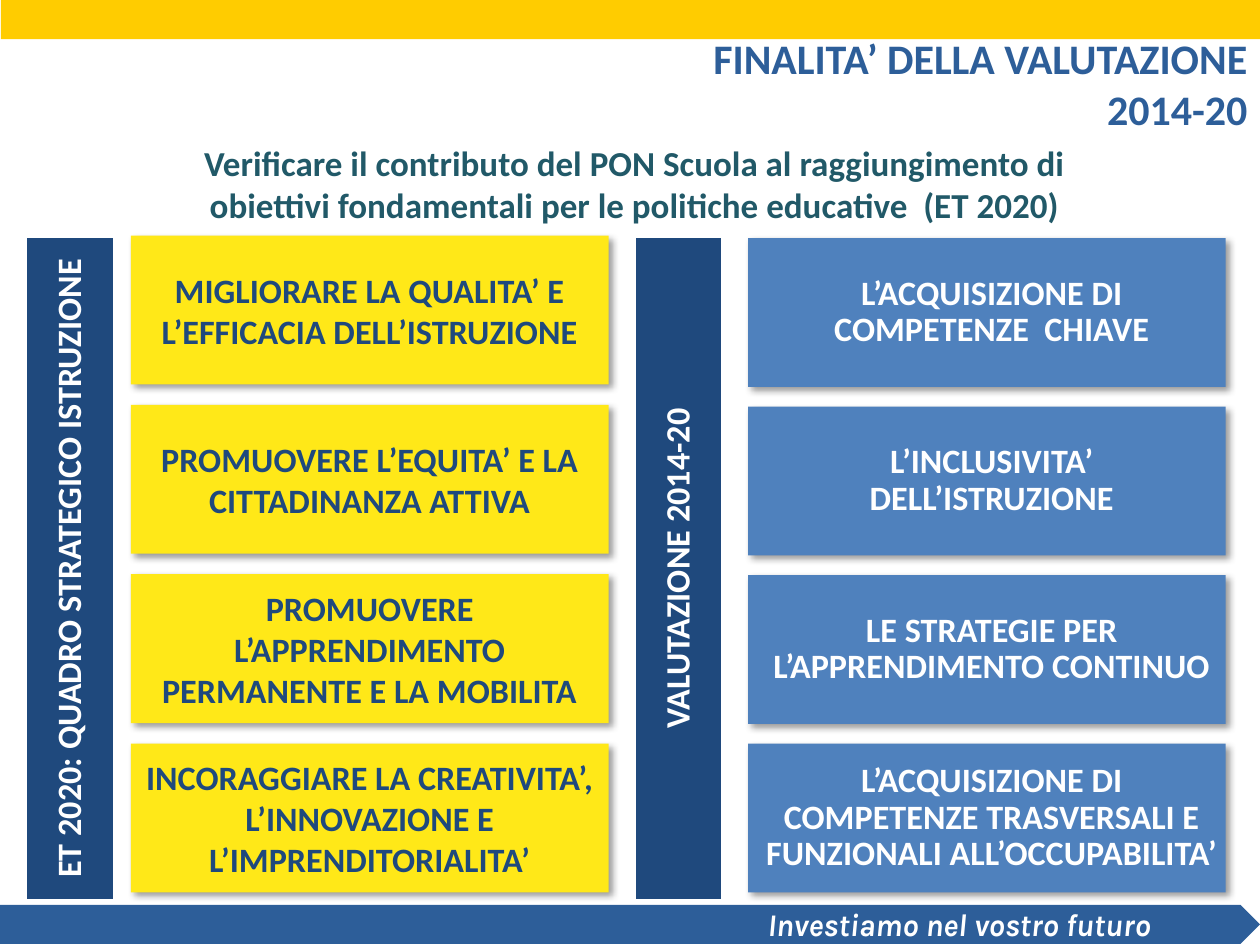
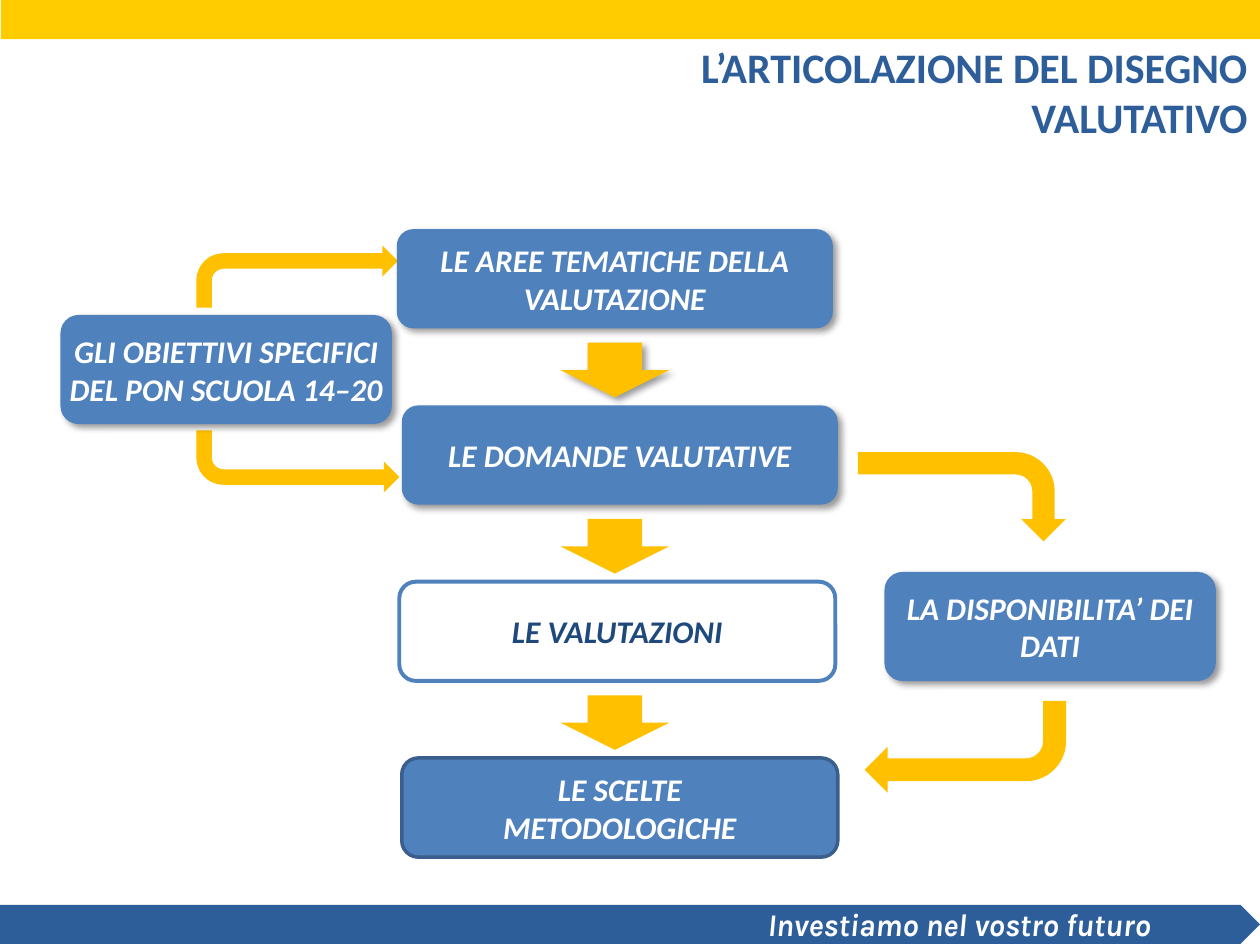
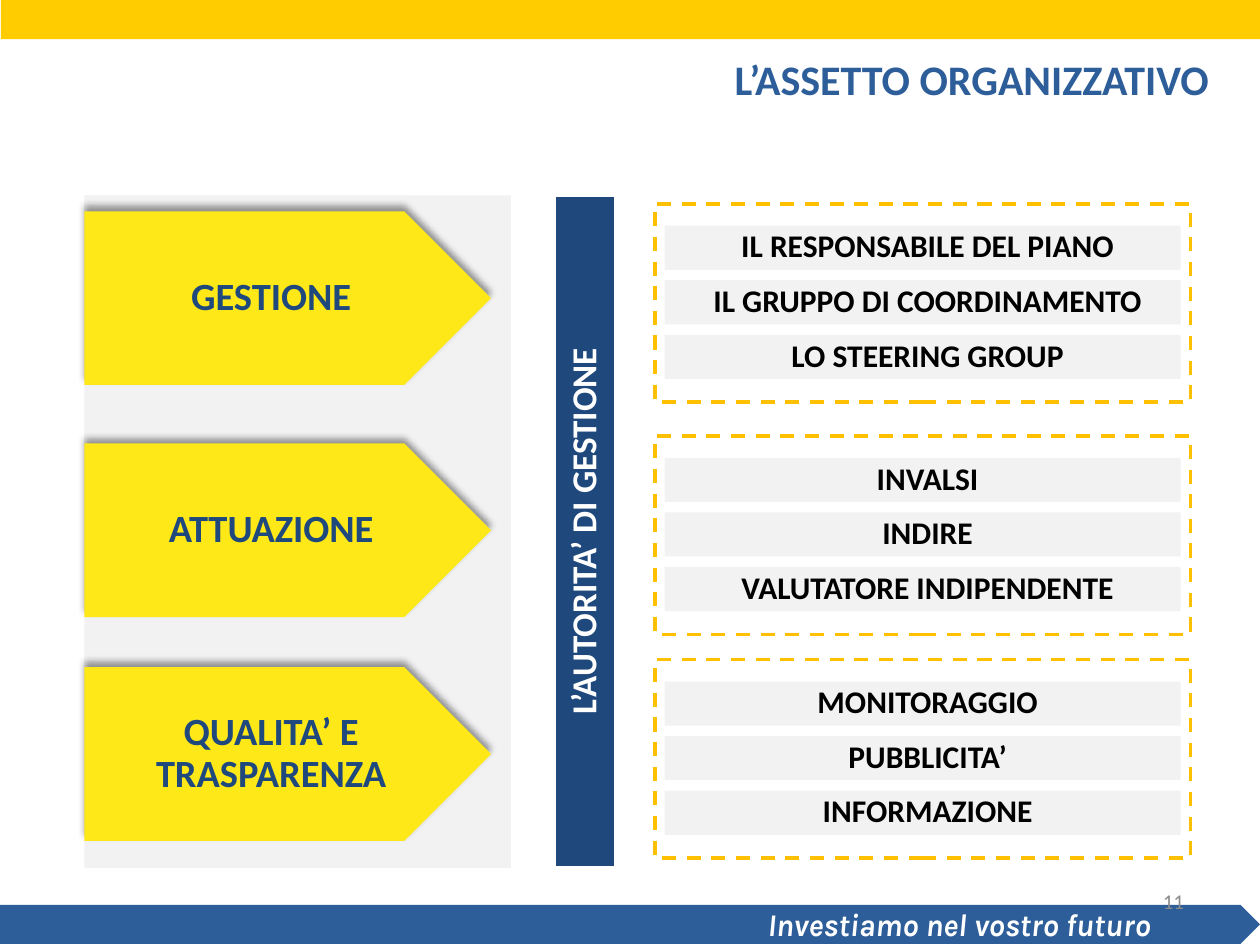
import lxml.etree
import pptx
import pptx.dml.color
import pptx.enum.dml
import pptx.enum.shapes
import pptx.enum.text
import pptx.oxml.ns
import pptx.util

Cm = pptx.util.Cm
Pt = pptx.util.Pt
SHAPE = pptx.enum.shapes.MSO_SHAPE
ALIGN = pptx.enum.text.PP_ALIGN
MIDDLE = pptx.enum.text.MSO_ANCHOR.MIDDLE
qn = pptx.oxml.ns.qn

COLORS = {
    "band": "FFCC00", "footer": "2D5E99", "title": "2D5E99", "navy": "1F497D",
    "yellow": "FFE818", "blue": "4F81BD", "arrow": "FFC000", "edge": "3A5F8C",
    "teal": "215968", "panel": "F2F2F2", "white": "FFFFFF", "black": "000000",
    "number": "8C8C8C",
}
WIDTH, HEIGHT = 25.4, 19.05
TITLE_ONLY = 5


def rgb(name):
    return pptx.dml.color.RGBColor.from_string(COLORS[name])


def add_shadow(sp, angle):
    effects = sp._element.spPr.find(qn("a:effectLst"))
    shadow = lxml.etree.SubElement(
        effects, qn("a:outerShdw"), blurRad=str(Pt(4)), dist=str(Pt(3)),
        dir=str(angle * 60000), rotWithShape="0")
    color = lxml.etree.SubElement(shadow, qn("a:srgbClr"), val=COLORS["black"])
    lxml.etree.SubElement(color, qn("a:alpha"), val="40000")


def add_box(s, kind, box, fill=None, line=None, weight=2, shadow=None):
    """Draw a preset shape in box (left, top, width, height in cm); shadow is an angle."""
    sp = s.shapes.add_shape(kind, *map(Cm, box))
    sp.shadow.inherit = False
    if fill:
        sp.fill.solid()
        sp.fill.fore_color.rgb = rgb(fill)
    else:
        sp.fill.background()
    if line:
        sp.line.color.rgb = rgb(line)
        sp.line.width = Pt(weight)
    else:
        sp.line.fill.background()
    if shadow is not None:
        add_shadow(sp, shadow)
    return sp


def write(sp, lines, size, color, align=ALIGN.CENTER, bold=True, italic=False,
          font="Calibri", spacing=None, insets=None):
    """Fill a shape with paragraphs; insets are left, top, right, bottom in cm."""
    tf = sp.text_frame
    tf.word_wrap = True
    tf.auto_size = pptx.enum.text.MSO_AUTO_SIZE.NONE
    tf.vertical_anchor = MIDDLE
    if insets:
        tf.margin_left, tf.margin_top, tf.margin_right, tf.margin_bottom = map(Cm, insets)
    tf.text = lines
    for p in tf.paragraphs:
        p.alignment = align
        if spacing:
            p.line_spacing = spacing
        p.font.name, p.font.size = font, Pt(size)
        p.font.bold, p.font.italic = bold, italic
        p.font.color.rgb = rgb(color)


def add_slide(prs, title, title_box):
    s = prs.slides.add_slide(prs.slide_layouts[TITLE_ONLY])
    add_box(s, SHAPE.RECTANGLE, (0.02, 0, WIDTH - 0.02, 0.79), "band")
    footer = add_box(s, SHAPE.PENTAGON, (0, 18.24, WIDTH, 0.79), "footer")
    write(footer, "Investiamo nel vostro futuro", 18, "white", ALIGN.RIGHT,
          italic=True, font="Karla", insets=(0.25, 0, 2, 0))
    sp = s.shapes.title
    sp.left, sp.top, sp.width, sp.height = map(Cm, title_box)
    write(sp, title, 24, "title", ALIGN.RIGHT, insets=(0.25, 0.13, 0.25, 0.13))
    return s


def add_vertical_label(s, box, text, size):
    sp = add_box(s, SHAPE.RECTANGLE, box, "navy", "white")
    write(sp, text, size, "white", spacing=0.9, insets=(0.15,) * 4)
    sp.text_frame._txBody.bodyPr.set("vert", "vert270")


def add_card_column(s, box, texts, fill, color, spacing, left_inset):
    """Stack equal cards so that they fill the height of box."""
    x, y, w, h = box
    card_h = 3
    pitch = (h - card_h) / (len(texts) - 1)
    for i, text in enumerate(texts):
        sp = add_box(s, SHAPE.RECTANGLE, (x, y + i * pitch, w, card_h), fill, shadow=45)
        write(sp, text, 19.5, color, spacing=spacing,
              insets=(left_inset, 0.15, 0.15, 0.15))


def build_goals(prs):
    s = add_slide(prs, "FINALITA’ DELLA VALUTAZIONE 2014-20", (12.27, 0.74, 13.13, 1.88))
    subtitle = s.shapes.add_textbox(Cm(0.89), Cm(2.72), Cm(23.8), Cm(1.96))
    write(subtitle, "Verificare il contributo del PON Scuola al raggiungimento di\n"
          "obiettivi fondamentali per le politiche educative  (ET 2020)", 20, "teal")
    add_vertical_label(s, (0.51, 4.76, 1.8, 13.4),
                       "ET 2020: QUADRO STRATEGICO ISTRUZIONE", 19.5)
    add_card_column(s, (2.64, 4.75, 9.63, 13.24), [
        "MIGLIORARE LA QUALITA’ E L’EFFICACIA DELL’ISTRUZIONE",
        "PROMUOVERE L’EQUITA’ E LA CITTADINANZA ATTIVA",
        "PROMUOVERE L’APPRENDIMENTO PERMANENTE E LA MOBILITA",
        "INCORAGGIARE LA CREATIVITA’, L’INNOVAZIONE E L’IMPRENDITORIALITA’",
    ], "yellow", "navy", None, 0.15)
    add_vertical_label(s, (12.78, 4.76, 1.8, 13.4), "VALUTAZIONE 2014-20", 19.5)
    add_card_column(s, (15.08, 4.8, 9.63, 13.19), [
        "L’ACQUISIZIONE DI COMPETENZE  CHIAVE",
        "L’INCLUSIVITA’ DELL’ISTRUZIONE",
        "LE STRATEGIE PER L’APPRENDIMENTO CONTINUO",
        "L’ACQUISIZIONE DI COMPETENZE TRASVERSALI E FUNZIONALI ALL’OCCUPABILITA’",
    ], "blue", "white", 0.9, 0.35)


def add_step(s, box, text, inset, fill="blue", color="white", **style):
    sp = add_box(s, SHAPE.ROUNDED_RECTANGLE, box, fill, **style)
    write(sp, text, 18, color, italic=True, insets=(inset, 0, inset, 0))


def add_bent_arrow(s, box, rotation=0, flip=False):
    sp = add_box(s, SHAPE.BENT_ARROW, box, "arrow")
    sp.rotation = rotation
    if flip:
        sp._element.spPr.xfrm.set("flipV", "1")


def add_step_chain(s, box):
    """Stack the four steps in box, with a down arrow in each gap."""
    x, y, w, h = box
    step_h, arrow_w, arrow_h = 2, 2.2, 1.1
    pitch = (h - step_h) / 3
    steps = [
        ("LE AREE TEMATICHE DELLA VALUTAZIONE", 0, {"shadow": 45}),
        ("LE DOMANDE VALUTATIVE", 0.1, {"shadow": 45}),
        ("LE VALUTAZIONI", 0.05, {"fill": "white", "color": "navy",
                                  "line": "blue", "weight": 2.25}),
        ("LE SCELTE METODOLOGICHE", 0.1, {"line": "edge"}),
    ]
    for i, (text, shift, style) in enumerate(steps):
        top = y + i * pitch
        add_step(s, (x + shift, top, w, step_h), text, 0.7, **style)
        if i < len(steps) - 1:
            arrow_box = (x + w / 2 - arrow_w / 2, top + step_h + 0.29, arrow_w, arrow_h)
            add_box(s, SHAPE.DOWN_ARROW, arrow_box, "arrow", shadow=45 if i == 0 else None)


def build_design(prs):
    s = add_slide(prs, "L’ARTICOLAZIONE DEL DISEGNO VALUTATIVO", (12.8, 0.91, 12.6, 1.88))
    add_bent_arrow(s, (3.96, 4.95, 4.06, 1.25))
    add_bent_arrow(s, (3.96, 8.68, 4.09, 1.25), flip=True)
    add_bent_arrow(s, (18.49, 7.92, 1.8, 4.19), rotation=90)
    add_bent_arrow(s, (17.43, 14.13, 4.06, 1.85), rotation=180)
    add_step(s, (1.22, 6.35, 6.68, 2.2), "GLI OBIETTIVI SPECIFICI DEL PON SCUOLA 14–20",
             0, shadow=45)
    add_step(s, (17.83, 11.53, 6.68, 2.2), "LA DISPONIBILITA’ DEI DATI", 0, shadow=45)
    add_step_chain(s, (8, 4.62, 8.79, 12.66))


def add_phase(s, box, text):
    sp = add_box(s, SHAPE.PENTAGON, box, "yellow", shadow=270)
    write(sp, text, 22, "navy", spacing=0.9, insets=(0.46, 0.13, 0.25, 0.13))


def add_actors(s, box, names):
    """List the actors on grey bars inside a dashed frame."""
    x, y, w, _ = box
    for i, name in enumerate(names):
        bar = add_box(s, SHAPE.RECTANGLE, (x + 0.2, y + 0.44 + i * 1.1, w - 0.4, 0.89), "panel")
        write(bar, name, 18, "black", spacing=0.9, insets=(0.25, 0.05, 0.05, 0.05))
    frame = add_box(s, SHAPE.RECTANGLE, box, line="arrow")
    frame.line.dash_style = pptx.enum.dml.MSO_LINE.DASH


def build_organisation(prs):
    s = add_slide(prs, "L’ASSETTO ORGANIZZATIVO", (10.9, 0.64, 13.72, 1.88))
    add_box(s, SHAPE.RECTANGLE, (1.7, 3.94, 8.6, 13.56), "panel")
    add_vertical_label(s, (11.18, 3.93, 1.23, 13.56), "L’AUTORITA’ DI GESTIONE", 20)
    phases = [
        (4.11, "GESTIONE", ["IL RESPONSABILE DEL PIANO", "IL GRUPPO DI COORDINAMENTO",
                            "LO STEERING GROUP"]),
        (8.79, "ATTUAZIONE", ["INVALSI", "INDIRE", "VALUTATORE INDIPENDENTE"]),
        (13.3, "QUALITA’ E TRASPARENZA", ["MONITORAGGIO", "PUBBLICITA’", "INFORMAZIONE"]),
    ]
    for top, phase, actors in phases:
        add_phase(s, (1.7, top + 0.15, 8.2, 3.5), phase)
        add_actors(s, (13.2, top, 10.8, 4), actors)
    number = s.shapes.add_textbox(Cm(18.2), Cm(17.65), Cm(5.92), Cm(1.02))
    write(number, "11", 12, "number", ALIGN.RIGHT, bold=False)


def main():
    prs = pptx.Presentation()
    prs.slide_width, prs.slide_height = Cm(WIDTH), Cm(HEIGHT)
    build_goals(prs)
    build_design(prs)
    build_organisation(prs)
    prs.save("out.pptx")


if __name__ == "__main__":
    main()
